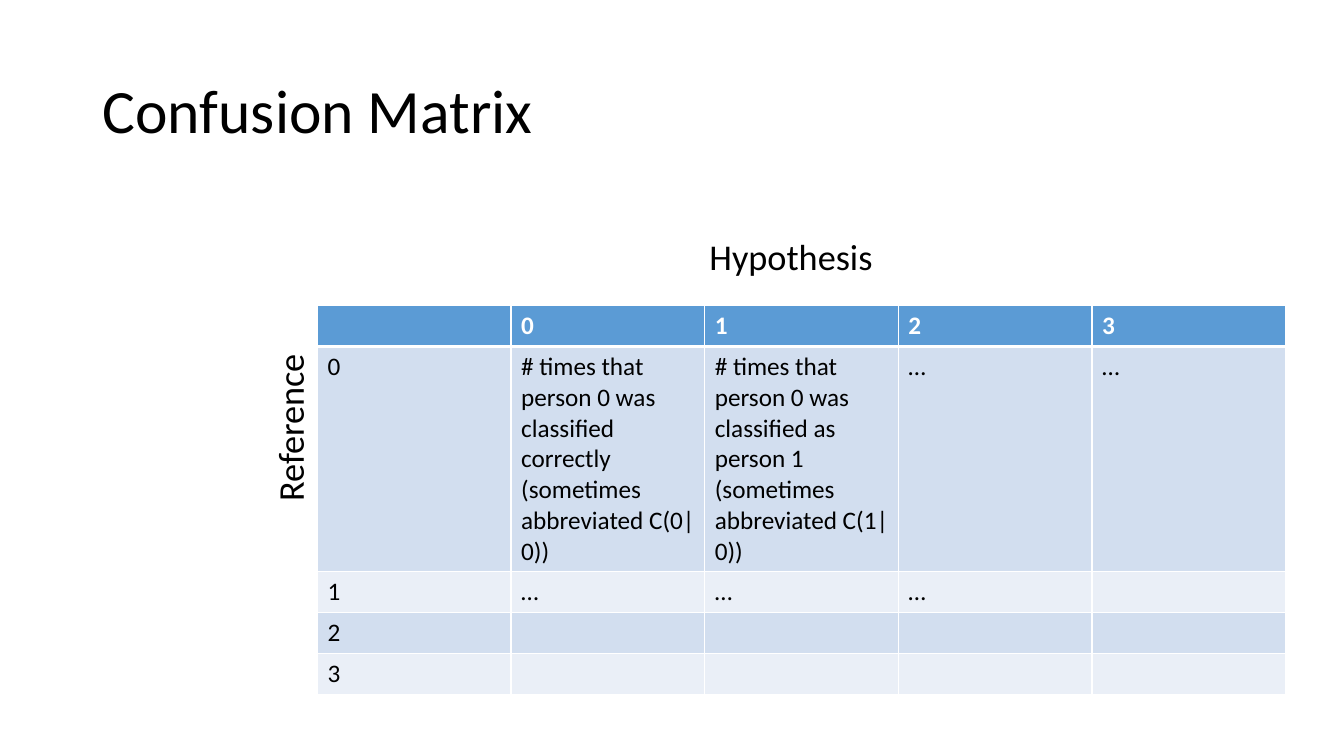
from lxml import etree
from pptx import Presentation
from pptx.dml.color import RGBColor
from pptx.enum.text import MSO_ANCHOR, MSO_AUTO_SIZE, PP_ALIGN
from pptx.oxml.ns import qn
from pptx.util import Cm, Pt

BLACK = RGBColor(0x00, 0x00, 0x00)
WHITE = RGBColor(0xFF, 0xFF, 0xFF)
HEADER_BLUE = RGBColor(0x5B, 0x9B, 0xD5)
BAND_DARK = RGBColor(0xD2, 0xDE, 0xEF)
BAND_LIGHT = RGBColor(0xEA, 0xEF, 0xF7)

CELL_FONT = {"name": "Calibri", "size": Pt(18), "bold": False}
LABEL_FONT = {"name": "Calibri", "size": Pt(25.9)}
TITLE_FONT = {"name": "Calibri", "size": Pt(44), "bold": False}

MATRIX = [
    ["", "0", "1", "2", "3"],
    ["0",
     "# times that person 0 was classified correctly (sometimes abbreviated C(0|0))",
     "# times that person 0 was classified as person 1 (sometimes abbreviated C(1|0))",
     "…", "…"],
    ["1", "…", "…", "…", ""],
    ["2", "", "", "", ""],
    ["3", "", "", "", ""],
]


def format_font(font, values, color):
    for name, value in values.items():
        setattr(font, name, value)
    font.color.rgb = color


def add_borders(cell, bottom_width):
    """Draw white lines on all four sides; they come before the fill."""
    properties = cell._tc.get_or_add_tcPr()
    widths = {"a:lnL": 1, "a:lnR": 1, "a:lnT": 1, "a:lnB": bottom_width}
    for position, (side, width) in enumerate(widths.items()):
        line = etree.Element(qn(side), w=str(Pt(width)))
        fill = etree.SubElement(line, qn("a:solidFill"))
        etree.SubElement(fill, qn("a:srgbClr"), val=str(WHITE))
        properties.insert(position, line)


def place_title(slide, left, top, width, height):
    title = slide.shapes.title
    title.left, title.top, title.width, title.height = left, top, width, height
    frame = title.text_frame
    frame.text = "Confusion Matrix"
    frame.auto_size = MSO_AUTO_SIZE.NONE
    frame.vertical_anchor = MSO_ANCHOR.MIDDLE
    heading = frame.paragraphs[0]
    heading.alignment = PP_ALIGN.LEFT
    heading.line_spacing = 0.9
    format_font(heading.font, TITLE_FONT, BLACK)


def place_matrix(slide, left, top, width, height):
    rows, columns = len(MATRIX), len(MATRIX[0])
    matrix_frame = slide.shapes.add_table(rows, columns, left, top, width, height)
    matrix = matrix_frame.table
    for row in matrix.rows:
        row.height = Cm(1.03)  # the row with long text grows to fit
    matrix_frame.height = height

    for r, texts in enumerate(MATRIX):
        is_header = r == 0
        band = HEADER_BLUE if is_header else (BAND_LIGHT, BAND_DARK)[r % 2]
        for c, text in enumerate(texts):
            cell = matrix.cell(r, c)
            cell.text = text
            cell.fill.solid()
            cell.fill.fore_color.rgb = band
            add_borders(cell, 3 if is_header else 1)
            format_font(cell.text_frame.paragraphs[0].font,
                        {**CELL_FONT, "bold": is_header},
                        WHITE if is_header else BLACK)


def place_axis_label(slide, text, left, top, width, height, rotation=0):
    label = slide.shapes.add_textbox(left, top, width, height)
    label.rotation = rotation
    frame = label.text_frame
    frame.word_wrap = True
    frame.text = text
    caption = frame.paragraphs[0]
    caption.line_spacing = 0.7
    format_font(caption.font, LABEL_FONT, BLACK)


def build_confusion_slide(presentation):
    slide = presentation.slides.add_slide(presentation.slide_layouts[5])
    place_title(slide, Cm(2.33), Cm(1.01), Cm(29.21), Cm(3.68))
    place_matrix(slide, Cm(8), Cm(7.7), Cm(24.4), Cm(9.7))
    # Axis names: above the columns and beside the rows
    place_axis_label(slide, "Hypothesis", Cm(17.63), Cm(6.07), Cm(4.78), Cm(1.14))
    place_axis_label(slide, "Reference", Cm(5.1), Cm(9.93), Cm(4.78), Cm(1.14), 270)


def main():
    presentation = Presentation()
    presentation.slide_width = Cm(33.87)
    presentation.slide_height = Cm(19.05)
    build_confusion_slide(presentation)
    presentation.save("out.pptx")


if __name__ == "__main__":
    main()
